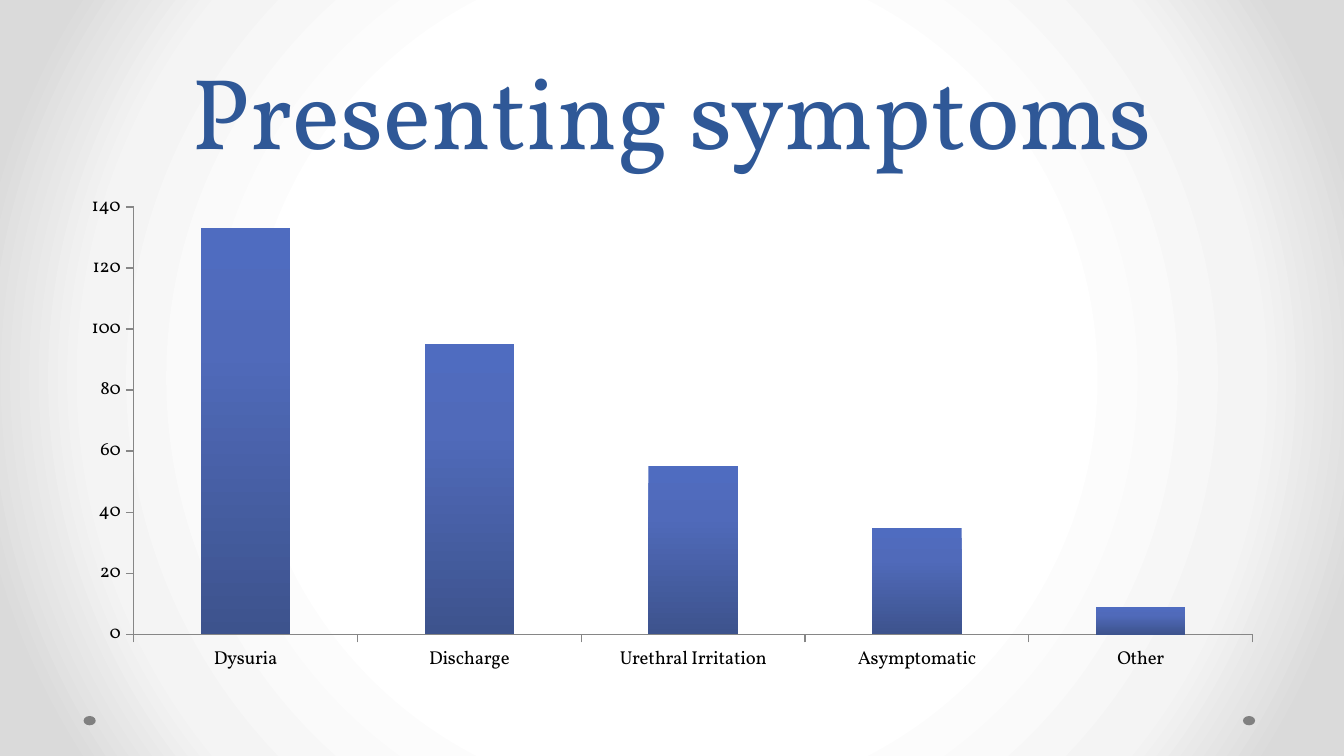
import dataclasses

import lxml.etree
import pptx
import pptx.chart.data
import pptx.dml.color
import pptx.enum.chart
import pptx.enum.shapes
import pptx.enum.text
import pptx.oxml
import pptx.oxml.ns
import pptx.util

Pt = pptx.util.Pt
qn = pptx.oxml.ns.qn


@dataclasses.dataclass(frozen=True)
class Theme:
    font: str = "Vollkorn"
    title_size: int = 54
    title_leading: int = 58
    label_size: int = 10
    title: str = "2F5897"
    label: str = "000000"
    axis: str = "868686"
    dot: str = "808080"
    backdrop: tuple = ((50, "FFFFFF"), (76, "F4F4F4"), (92, "DADADA"))
    bar: tuple = ((0, "4F6CC0"), (30, "506ABA"), (100, "3D538D"))


THEME = Theme()
SYMPTOMS = {
    "Dysuria": 133,
    "Discharge": 95,
    "Urethral Irritation": 55,
    "Asymptomatic": 35,
    "Other": 9,
}
RADIAL = (
    '<a:path path="circle">'
    '<a:fillToRect l="50000" t="50000" r="50000" b="50000"/></a:path>'
)
DOWNWARD = '<a:lin ang="5400000" scaled="0"/>'


def color(code):
    return pptx.dml.color.RGBColor.from_string(code)


def style_font(font, size, code):
    font.name = THEME.font
    font.size = Pt(size)
    font.color.rgb = color(code)


def apply_gradient(fill, owner, stops, direction):
    fill.gradient()
    gradient = owner.xpath(".//a:gradFill")[0]
    for child in list(gradient):
        gradient.remove(child)
    marks = "".join(
        f'<a:gs pos="{position * 1000}"><a:srgbClr val="{code}"/></a:gs>'
        for position, code in stops
    )
    namespace = pptx.oxml.ns.nsdecls("a")
    parts = pptx.oxml.parse_xml(
        f"<a:gradFill {namespace}><a:gsLst>{marks}</a:gsLst>{direction}</a:gradFill>"
    )
    gradient.extend(list(parts))


def add_title(page, left, top, width, height):
    box = page.shapes.add_textbox(Pt(left), Pt(top), Pt(width), Pt(height))
    frame = box.text_frame
    frame.word_wrap = True
    frame.vertical_anchor = pptx.enum.text.MSO_ANCHOR.BOTTOM
    frame.text = "Presenting symptoms"
    para = frame.paragraphs[0]
    para.alignment = pptx.enum.text.PP_ALIGN.CENTER
    para.line_spacing = Pt(THEME.title_leading)
    style_font(para.runs[0].font, THEME.title_size, THEME.title)


def add_dots(page, left, top, width, height):
    dot_width = 6.5
    for dot_left in (left, left + width - dot_width):
        dot = page.shapes.add_shape(
            pptx.enum.shapes.MSO_SHAPE.OVAL,
            Pt(dot_left), Pt(top), Pt(dot_width), Pt(height),
        )
        dot.shadow.inherit = False
        dot.fill.solid()
        dot.fill.fore_color.rgb = color(THEME.dot)
        dot.line.fill.background()


def set_plot_area(chart, **fractions):
    plot_area = chart._chartSpace.chart.plotArea
    for layout in plot_area.findall(qn("c:layout")):
        plot_area.remove(layout)
    layout = lxml.etree.Element(qn("c:layout"))
    manual = lxml.etree.SubElement(layout, qn("c:manualLayout"))
    settings = {"layoutTarget": "inner", "xMode": "edge", "yMode": "edge", **fractions}
    for name, value in settings.items():
        lxml.etree.SubElement(manual, qn(f"c:{name}")).set("val", str(value))
    plot_area.insert(0, layout)


def add_symptom_chart(page, left, top, width, height):
    data = pptx.chart.data.CategoryChartData()
    data.categories = list(SYMPTOMS)
    data.add_series("Series 1", list(SYMPTOMS.values()))
    chart = page.shapes.add_chart(
        pptx.enum.chart.XL_CHART_TYPE.COLUMN_CLUSTERED,
        Pt(left), Pt(top), Pt(width), Pt(height), data,
    ).chart
    chart.has_legend = False
    chart.has_title = False
    style_font(chart.font, THEME.label_size, THEME.label)
    for axis in (chart.category_axis, chart.value_axis):
        axis.has_major_gridlines = False
        axis.major_tick_mark = pptx.enum.chart.XL_TICK_MARK.OUTSIDE
        axis.format.line.color.rgb = color(THEME.axis)
        axis.format.line.width = Pt(0.75)
    chart.value_axis.minimum_scale = 0
    chart.value_axis.maximum_scale = 140
    chart.value_axis.major_unit = 20
    plot = chart.plots[0]
    plot.gap_width = 150
    plot.vary_by_categories = False
    series = plot.series[0]
    apply_gradient(series.format.fill, series._element, THEME.bar, DOWNWARD)
    set_plot_area(chart, x=0.055, y=0.043, w=0.925, h=0.858)


def main():
    deck = pptx.Presentation()
    deck.slide_width, deck.slide_height = Pt(720), Pt(405)
    page = deck.slides.add_slide(deck.slide_layouts[6])
    apply_gradient(page.background.fill, page._element, THEME.backdrop, RADIAL)
    margin = 36
    content_width = 720 - 2 * margin
    add_dots(page, 44.8, 383.6, 627.6, 5)
    add_title(page, margin, 0, content_width, 94.5)
    add_symptom_chart(page, margin, 99.4, content_width, 267)
    deck.save("out.pptx")


if __name__ == "__main__":
    main()
